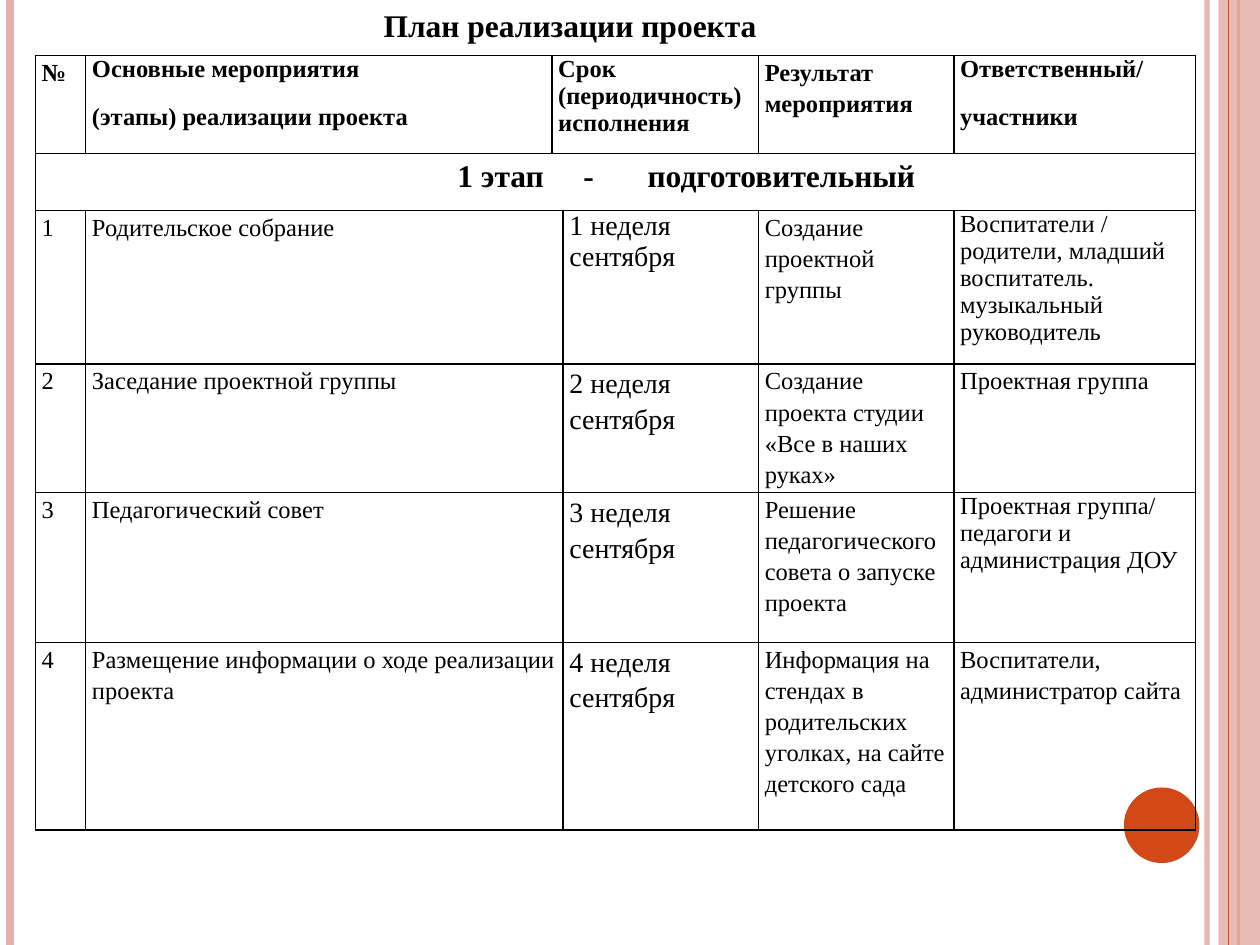
from dataclasses import dataclass

from lxml import etree
from pptx import Presentation
from pptx import util as u
from pptx.dml.color import RGBColor
from pptx.enum import shapes, text
from pptx.oxml import ns


@dataclass(frozen=True)
class Theme:
    """Colours, font and type sizes of the deck."""
    ink: str = "000000"
    accent: str = "D34817"
    tint: str = "E6B1AC"
    font: str = "Times New Roman"
    title: int = 18
    period: int = 16
    body: int = 14


SPACED = {"line_spacing": 1.15, "space_before": u.Pt(6), "space_after": u.Pt(6)}
PLAIN = {"line_spacing": 1.0, "space_before": u.Pt(0), "space_after": u.Pt(0)}
JUSTIFIED = {**SPACED, "alignment": text.PP_ALIGN.JUSTIFY}
HEADING = {**JUSTIFIED, "line_spacing": 1.0}
CENTRED = {**PLAIN, "alignment": text.PP_ALIGN.CENTER}

COLUMNS = [0.4, 3.7, 0.09, 1.55, 1.55, 1.92]
ROWS = [0.78, 0.45, 1.22, 1.02, 1.19, 1.49]
HEADER = [
    (0, 0, SPACED, ["№"]),
    (1, 1, HEADING, ["Основные мероприятия", "(этапы) реализации проекта"]),
    (2, 3, HEADING, ["Срок (периодичность) исполнения"]),
    (4, 4, JUSTIFIED, ["Результат мероприятия"]),
    (5, 5, HEADING, ["Ответственный/", "участники"]),
]
STAGE = ["1 этап", "-", "подготовительный"]
STAGE_TABS = [3.3, 4.3, 4.81]
STEPS = [
    (["Родительское собрание"], ["1 неделя", "сентября"],
     ["Создание проектной группы"],
     ["Воспитатели /", "родители, младший воспитатель. музыкальный руководитель"]),
    (["Заседание проектной группы"], ["2 неделя сентября"],
     ["Создание проекта студии «Все в наших руках»"], ["Проектная группа"]),
    (["Педагогический совет"], ["3 неделя сентября"],
     ["Решение педагогического совета о запуске проекта"],
     ["Проектная группа/", "педагоги и администрация ДОУ"]),
    (["Размещение информации о ходе реализации проекта"], ["4 неделя сентября"],
     ["Информация на стендах в родительских уголках, на сайте детского сада"],
     ["Воспитатели, администратор сайта"]),
]


class Page:
    """Holds the theme and the current slide and adds elements to it."""

    def __init__(self, slide, theme):
        self.slide = slide
        self.theme = theme

    def set_alpha(self, element, percent):
        """Make the solid colour inside an element partly transparent."""
        colour = next(element.iter(ns.qn("a:srgbClr")))
        etree.SubElement(colour, ns.qn("a:alpha"), val=str(percent * 1000))

    def rule(self, left, colour, width, alpha=100):
        """Draw a vertical line over the full height."""
        line = self.slide.shapes.add_connector(
            shapes.MSO_CONNECTOR.STRAIGHT, u.Inches(left), u.Inches(0),
            u.Inches(left), u.Inches(7.5))
        line.line.color.rgb = RGBColor.from_string(colour)
        line.line.width = u.Pt(width)
        properties = line._element.spPr
        if alpha < 100:
            self.set_alpha(properties, alpha)
        etree.SubElement(properties, ns.qn("a:effectLst"))

    def shape(self, kind, left, top, width, height, colour, alpha=100):
        """Draw a filled preset shape without outline."""
        shape = self.slide.shapes.add_shape(
            kind, *map(u.Inches, (left, top, width, height)))
        shape.shadow.inherit = False
        shape.fill.solid()
        shape.fill.fore_color.rgb = RGBColor.from_string(colour)
        shape.line.fill.background()
        if alpha < 100:
            self.set_alpha(shape._element.spPr, alpha)

    def fill_text(self, frame, lines, layout, size, bold=False):
        """Fill a text frame with one paragraph per line."""
        font = {"name": self.theme.font, "size": u.Pt(size), "bold": bold}
        for index, line in enumerate(lines):
            para = frame.add_paragraph() if index else frame.paragraphs[0]
            for name, value in layout.items():
                setattr(para, name, value)
            span = para.add_run()
            span.text = line
            for name, value in font.items():
                setattr(span.font, name, value)
            span.font.color.rgb = RGBColor.from_string(self.theme.ink)

    def title(self, line, left, top, width, height):
        """Place and format the title placeholder."""
        box = self.slide.shapes.title
        place = {"left": left, "top": top, "width": width, "height": height}
        for name, value in place.items():
            setattr(box, name, u.Inches(value))
        frame = box.text_frame
        frame.word_wrap = True
        frame.auto_size = text.MSO_AUTO_SIZE.NONE
        frame.vertical_anchor = text.MSO_ANCHOR.TOP
        frame.margin_top = u.Inches(0.08)
        self.fill_text(frame, [line], CENTRED, self.theme.title, True)

    def table(self, left, top, columns, rows):
        """Add a bordered table without fills."""
        sizes = u.Inches(sum(columns)), u.Inches(sum(rows))
        table = self.slide.shapes.add_table(
            len(rows), len(columns), u.Inches(left), u.Inches(top), *sizes).table
        table.first_row = table.horz_banding = False
        for column, width in zip(table.columns, columns):
            column.width = u.Inches(width)
        for row, height in zip(table.rows, rows):
            row.height = u.Inches(height)
        for cell in table.iter_cells():
            self.frame_cell(cell)
        return table

    def frame_cell(self, cell):
        """Set the margins, borders and empty fill of a cell."""
        margins = {"left": 0.05, "top": 0, "right": 0.05, "bottom": 0}
        for side, value in margins.items():
            setattr(cell, f"margin_{side}", u.Inches(value))
        properties = cell._tc.get_or_add_tcPr()
        for side in "LRTB":
            line = etree.SubElement(properties, ns.qn(f"a:ln{side}"), w=str(u.Pt(1)))
            fill = etree.SubElement(line, ns.qn("a:solidFill"))
            etree.SubElement(fill, ns.qn("a:srgbClr"), val=self.theme.ink)
        cell.fill.background()

    def cell(self, table, row, first, last, lines, layout, size, bold=False):
        """Fill a cell, merged over its columns."""
        cell = table.cell(row, first)
        if last > first:
            cell.merge(table.cell(row, last))
        self.fill_text(cell.text_frame, lines, layout, size, bold)
        return cell

    def tab_stops(self, para, positions):
        """Give a paragraph left tab stops."""
        stops = etree.SubElement(para._p.get_or_add_pPr(), ns.qn("a:tabLst"))
        for position in positions:
            etree.SubElement(stops, ns.qn("a:tab"),
                             pos=str(u.Inches(position)), algn="l")


def add_plan(page):
    """Fill the plan table."""
    theme = page.theme
    table = page.table(0.28, 0.44, COLUMNS, ROWS)
    for first, last, layout, lines in HEADER:
        page.cell(table, 0, first, last, lines, layout, theme.body, True)
    stage = "".join(f"\t{part}" for part in STAGE)
    cell = page.cell(table, 1, 0, 5, [stage], SPACED, theme.title, True)
    page.tab_stops(cell.text_frame.paragraphs[0], STAGE_TABS)
    spans = [(0, 0), (1, 2), (3, 3), (4, 4), (5, 5)]
    for number, step in enumerate(STEPS, 1):
        for (first, last), lines in zip(spans, ([str(number)], *step)):
            layout = PLAIN if len(lines) > 1 else SPACED
            size = theme.period if first == 3 else theme.body
            page.cell(table, number + 1, first, last, lines, layout, size)


def main():
    """Build and save the deck."""
    theme = Theme()
    deck = Presentation()
    deck.slide_width, deck.slide_height = u.Inches(10), u.Inches(7.5)
    page = Page(deck.slides.add_slide(deck.slide_layouts[5]), theme)
    page.rule(9.58, theme.tint, 3, 93)
    page.rule(0.08, theme.tint, 4.5)
    page.rule(9.83, theme.accent, 1.5)
    page.shape(shapes.MSO_SHAPE.RECTANGLE, 9.67, 0, 0.33, 7.5, theme.tint, 87)
    page.rule(9.75, theme.accent, 0.75)
    page.shape(shapes.MSO_SHAPE.OVAL, 8.92, 6.25, 0.6, 0.6, theme.accent)
    add_plan(page)
    page.title("План реализации проекта", 2.32, -0.03, 4.41, 0.71)
    deck.save("out.pptx")


if __name__ == "__main__":
    main()
